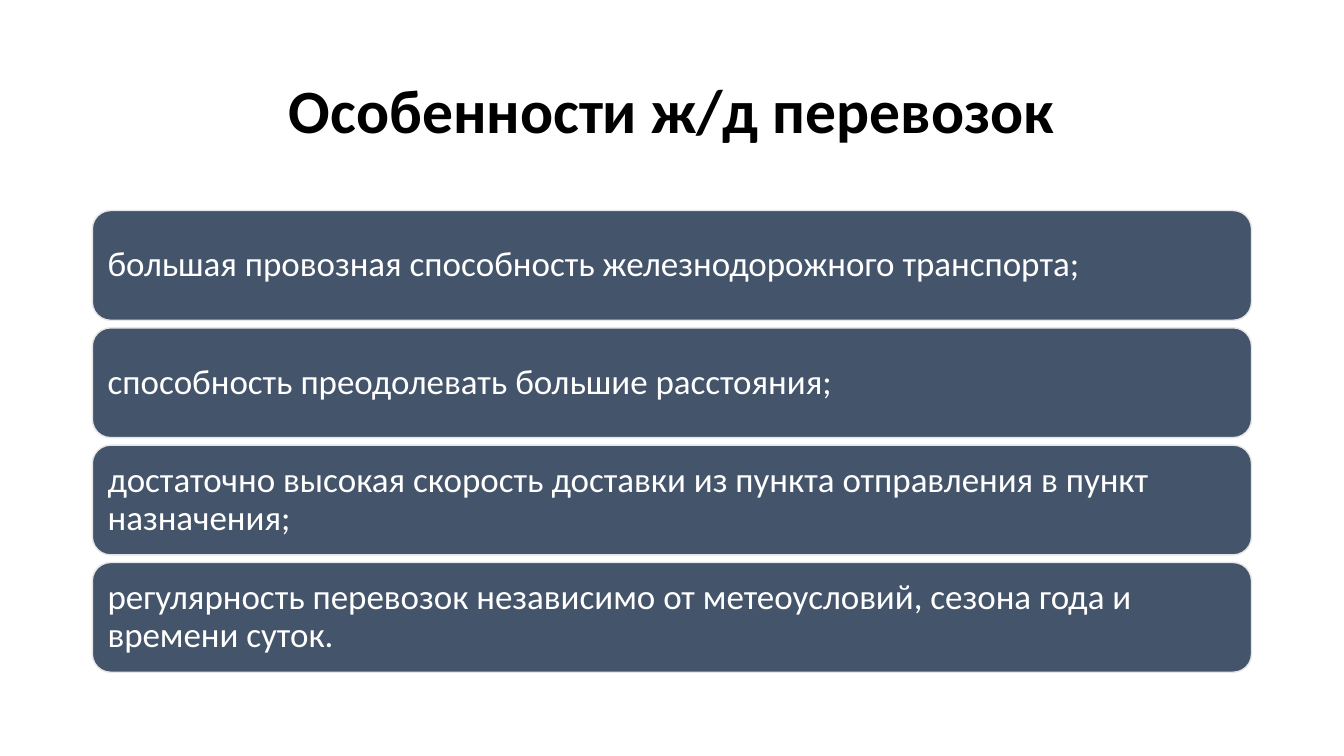
from pptx import Presentation
from pptx.dml.color import RGBColor
from pptx.enum.shapes import MSO_SHAPE as Shape
from pptx.enum.text import MSO_ANCHOR as Anchor, PP_ALIGN as Align
from pptx.util import Pt

COLORS = {"title": "000000", "bar": "44546A", "outline": "E7E6E6", "bar_text": "FFFFFF"}
LEFT, WIDTH = 66, 828
BARS_TOP, BAR_HEIGHT, BAR_PITCH = 150.4, 78.4, 83.8

FEATURES = [
    "большая провозная способность железнодорожного транспорта;",
    "способность преодолевать большие расстояния;",
    "достаточно высокая скорость доставки из пункта отправления в пункт назначения;",
    "регулярность перевозок независимо от метеоусловий, сезона года и времени суток.",
]


def color(name):
    return RGBColor.from_string(COLORS[name])


def write(frame, text, *, size, ink, bold=False, align=Align.LEFT, inset=7.2):
    frame.word_wrap = True
    frame.vertical_anchor = Anchor.MIDDLE
    frame.margin_left = frame.margin_right = Pt(7.2)
    frame.margin_top = frame.margin_bottom = Pt(inset)
    paragraph = frame.paragraphs[0]
    paragraph.alignment = align
    paragraph.line_spacing = 0.9
    run = paragraph.add_run()
    run.text = text
    run.font.name = "Calibri"
    run.font.size = Pt(size)
    run.font.bold = bold
    run.font.color.rgb = color(ink)


def add_title(slide, text):
    title = slide.shapes.add_textbox(Pt(LEFT), Pt(28.8), Pt(WIDTH), Pt(104.4))
    write(title.text_frame, text, size=44, ink="title", bold=True,
          align=Align.CENTER, inset=3.6)


def add_feature_bar(slide, text, top):
    bar = slide.shapes.add_shape(
        Shape.ROUNDED_RECTANGLE, Pt(LEFT), Pt(top), Pt(WIDTH), Pt(BAR_HEIGHT))
    bar.shadow.inherit = False
    bar.fill.solid()
    bar.fill.fore_color.rgb = color("bar")
    bar.line.color.rgb = color("outline")
    bar.line.width = Pt(1)
    write(bar.text_frame, text, size=25, ink="bar_text")


def main():
    deck = Presentation()
    deck.slide_width, deck.slide_height = Pt(960), Pt(540)
    slide = deck.slides.add_slide(deck.slide_layouts[6])

    # Heading
    add_title(slide, "Особенности ж/д перевозок")

    # Stack of feature bars
    for row, feature in enumerate(FEATURES):
        add_feature_bar(slide, feature, BARS_TOP + row * BAR_PITCH)

    deck.save("out.pptx")


if __name__ == "__main__":
    main()
